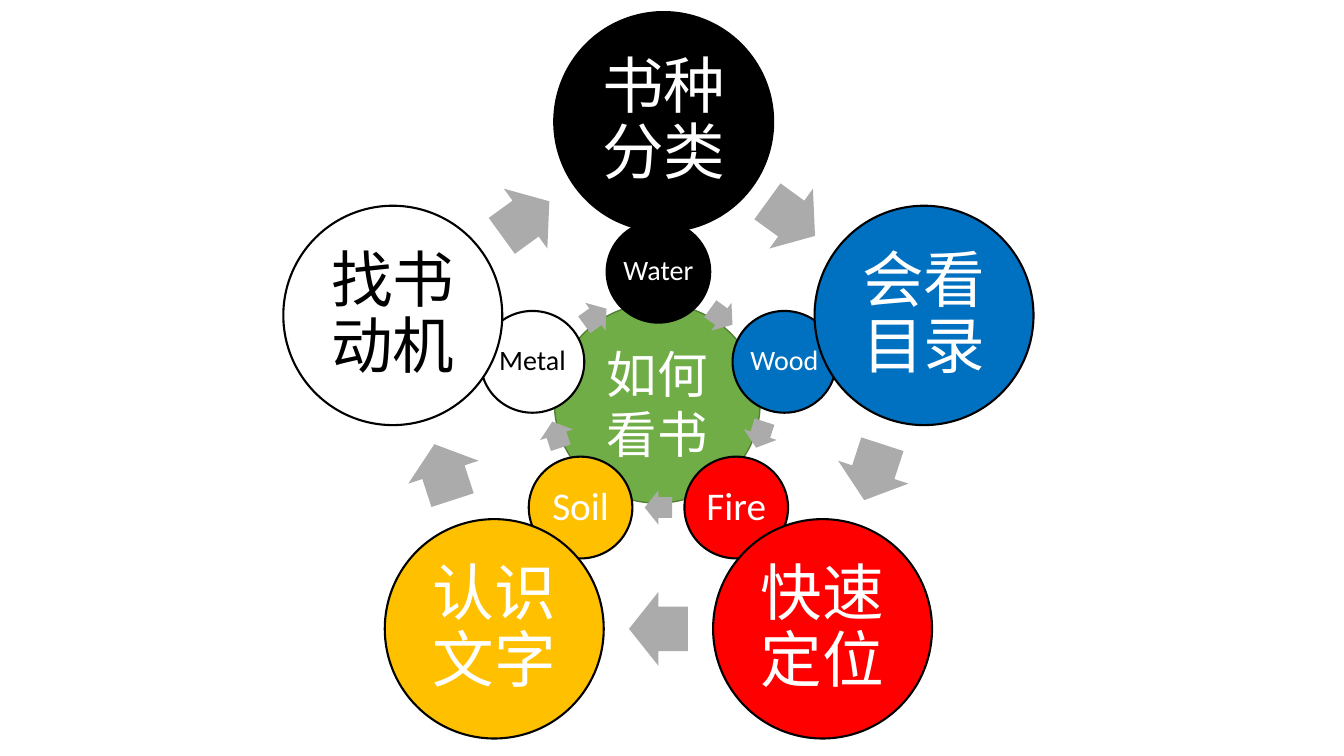
import math
from pptx import Presentation
from pptx import util as u
from pptx.dml.color import RGBColor
from pptx.enum import shapes, text

Pt = u.Pt
prs = Presentation()
prs.slide_width, prs.slide_height = Pt(960), Pt(540)
s = prs.slides.add_slide(prs.slide_layouts[6])


def rgb(value):
    return RGBColor.from_string(value)


def add_shape(kind, cx, cy, w, h, fill, line=None, line_width=1.5):
    """Add a preset shape centred on cx, cy."""
    sp = s.shapes.add_shape(kind, Pt(cx - w / 2), Pt(cy - h / 2), Pt(w), Pt(h))
    sp.shadow.inherit = False
    sp.fill.solid()
    sp.fill.fore_color.rgb = rgb(fill)
    if line:
        sp.line.color.rgb = rgb(line)
        sp.line.width = Pt(line_width)
    else:
        sp.line.fill.background()
    return sp


OVAL = shapes.MSO_SHAPE.OVAL
ARROW = shapes.MSO_SHAPE.RIGHT_ARROW
CX, CY = 470.3, 287.2
BLACK, WHITE = "000000", "FFFFFF"
circles = []

# Centre circle
hub = add_shape(OVAL, 469.5, 288, 146.9, 142.6, "70AD47", "538035", 1)
circles.append((hub, "如何看书", 36, WHITE, 1.0))

# Rings, clockwise from the top: label, size, horizontal shift
elements = [(BLACK, WHITE), ("0070C0", WHITE), ("FF0000", WHITE),
            ("FFC000", WHITE), (WHITE, BLACK)]
rings = [
    {"radius": (94.6, 93.1), "circle": (74, 72.7), "arrow": (19.6, 24.6),
     "labels": [("Water", 20, 0), ("Wood", 20, 0), ("Fire", 28, 0),
                ("Soil", 28, 0), ("Metal", 20, 0)]},
    {"radius": (199.5, 200.2), "circle": (156.4, 156.7), "arrow": (42, 52.8),
     "labels": [("书种分类", 44, 3.8), ("会看目录", 44, 0), ("快速定位", 44, 0),
                ("认识文字", 44, 0), ("找书动机", 44, 0)]},
]
for ring in rings:
    rx, ry = ring["radius"]
    for i, (label, size, shift) in enumerate(ring["labels"]):
        fill, color = elements[i]
        angle = math.radians(72 * i)
        sp = add_shape(OVAL, CX + rx * math.sin(angle) + shift,
                       CY - ry * math.cos(angle), *ring["circle"], fill, BLACK)
        circles.append((sp, label, size, color, 0.9))

        # Arrow to the next circle, halfway along the chord
        turn = 72 * i + 36
        angle, chord = math.radians(turn), math.cos(math.radians(36))
        arrow = add_shape(ARROW, CX + rx * chord * math.sin(angle),
                          CY - ry * chord * math.cos(angle), *ring["arrow"], "ABABAB")
        arrow.rotation = turn
        arrow.adjustments[0] = 0.6
        arrow.adjustments[1] = 0.5

# Circle text
frame_format = {"margin_left": 0, "margin_right": 0, "margin_top": 0,
                "margin_bottom": 0, "vertical_anchor": text.MSO_ANCHOR.MIDDLE}
for sp, label, size, color, spacing in circles:
    tf = sp.text_frame
    for name, value in frame_format.items():
        setattr(tf, name, value)
    tf.word_wrap = not label.isascii()
    p = tf.paragraphs[0]
    p.alignment = text.PP_ALIGN.CENTER
    p.line_spacing = spacing
    r = p.add_run()
    r.text = label
    for name, value in {"name": "Calibri", "size": Pt(size)}.items():
        setattr(r.font, name, value)
    r.font.color.rgb = rgb(color)

prs.save("out.pptx")
